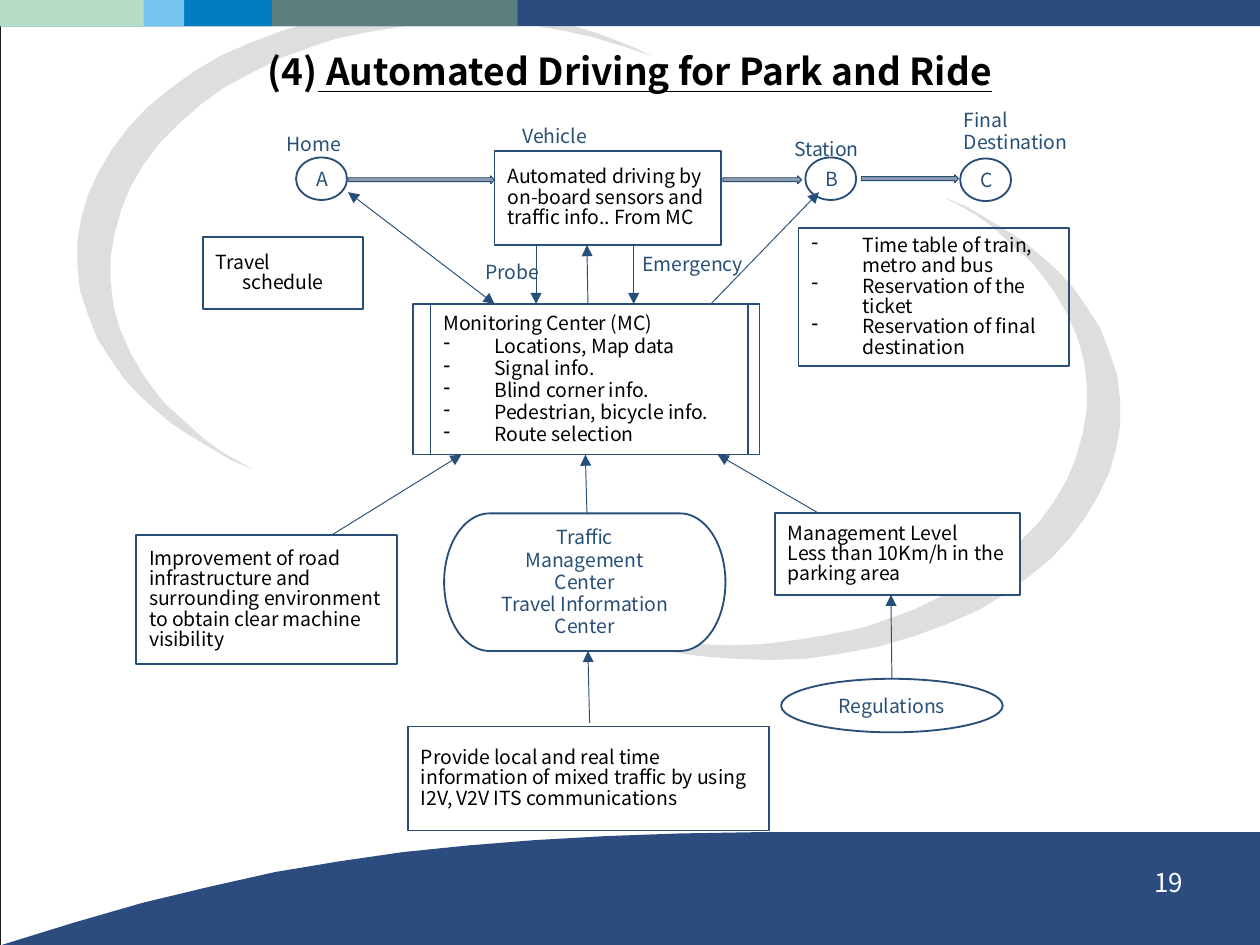
"""Build the Automated Driving for Park and Ride slide."""
import pptx
import pptx.util
from lxml import etree
from pptx.dml.color import RGBColor
from pptx.enum.shapes import MSO_CONNECTOR, MSO_SHAPE
from pptx.enum.text import MSO_ANCHOR, MSO_AUTO_SIZE, PP_ALIGN
from pptx.oxml.ns import qn
from pptx.util import Cm, Pt

COLORS = {
    "ink": "000000", "blue": "274F77", "white": "FFFFFF", "navy": "2C4C80",
    "slate": "5D7E7E", "azure": "007CC3", "sky": "75C5F0", "mint": "B6DDC7",
    "swoosh": "DEDEDD", "frame": "1F1A17", "arrow_top": "9FA9B9", "arrow_end": "7F8CA3",
}
RGB = {name: RGBColor.from_string(value) for name, value in COLORS.items()}
FONT = "Noto Sans CJK JP"


def style(sp, fill=None, line=None, width=1):
    sp.shadow.inherit = False
    if fill:
        sp.fill.solid()
        sp.fill.fore_color.rgb = RGB[fill]
    else:
        sp.fill.background()
    if line:
        sp.line.color.rgb = RGB[line]
        sp.line.width = Pt(width)
    else:
        sp.line.fill.background()


def write(sp, text, color, align=PP_ALIGN.LEFT, spacing=None, size=10.5, hanging=0):
    tf = sp.text_frame
    tf.word_wrap = True
    for i, line in enumerate(text.split("\n")):
        p = tf.paragraphs[0] if i == 0 else tf.add_paragraph()
        bullet = line.startswith("- ")
        indent = 0.97 if bullet else hanging
        if indent:
            pPr = p._p.get_or_add_pPr()
            pPr.set("marL", str(Cm(indent)))
            pPr.set("indent", str(-Cm(indent)))
            if bullet:
                etree.SubElement(pPr, qn("a:buChar")).set("char", "-")
        p.alignment = align
        if spacing:
            p.line_spacing = Pt(spacing)
        r = p.add_run()
        r.text = line.removeprefix("- ")
        for key, value in {"name": FONT, "size": Pt(size)}.items():
            setattr(r.font, key, value)
        r.font.color.rgb = RGB[color]


prs = pptx.Presentation()
prs.slide_width, prs.slide_height = Cm(24), Cm(18)
s = prs.slides.add_slide(prs.slide_layouts[5])
shapes = s.shapes

frame = shapes.add_shape(MSO_SHAPE.RECTANGLE, 0, 0, Cm(24), Cm(18))
style(frame, line="frame", width=0.13)

swoosh = [
    (212, 23), (239, 15), (266, 10), (293, 6), (320, 5), (348, 6), (374, 8), (401, 12),
    (426, 18), (451, 26), (474, 35), (489, 42), (468, 35), (445, 28), (422, 23), (399, 19),
    (374, 17), (350, 16), (326, 17), (301, 20), (277, 24), (252, 29), (237, 34), (212, 43),
    (190, 54), (169, 65), (151, 78), (135, 92), (120, 107), (108, 123), (98, 140), (91, 157),
    (86, 175), (83, 193), (83, 211), (85, 229), (90, 247), (98, 265), (108, 282), (116, 293),
    (124, 303), (134, 312), (144, 321), (154, 330), (165, 338), (177, 345), (190, 352),
    (173, 345), (158, 336), (143, 327), (129, 318), (116, 307), (104, 296), (93, 284),
    (84, 271), (73, 254), (66, 236), (60, 218), (58, 199), (58, 181), (61, 163), (66, 146),
    (74, 129), (84, 112), (96, 96), (110, 81), (127, 67), (145, 54), (165, 42), (188, 32),
]
turned_swoosh = [(898 - x, 500 - y) for x, y in swoosh]
wave = [
    (949, 624), (946, 709), (0, 709), (55, 692), (107, 677), (157, 665), (206, 654),
    (254, 646), (302, 639), (351, 634), (401, 630), (454, 627), (510, 625), (569, 624),
]
for points, fill in [(swoosh, "swoosh"), (turned_swoosh, "swoosh"), (wave, "navy")]:
    builder = shapes.build_freeform(*points[0], scale=Cm(2.54) / 100)
    builder.add_line_segments(points[1:], close=True)
    style(builder.convert_to_shape(), fill)

for width, fill in [(24, "navy"), (9.86, "slate"), (5.18, "azure"), (3.51, "sky"), (2.74, "mint")]:
    style(shapes.add_shape(MSO_SHAPE.RECTANGLE, 0, 0, Cm(width), Cm(0.5)), fill)

title = shapes.title
shapes._spTree.append(title._element)
for key, value in {"left": 1.19, "top": 0.48, "width": 21.62, "height": 1.75}.items():
    setattr(title, key, Cm(value))
tf = title.text_frame
tf.auto_size = MSO_AUTO_SIZE.NONE
tf.vertical_anchor = MSO_ANCHOR.MIDDLE
p = tf.paragraphs[0]
p.alignment = PP_ALIGN.CENTER
for text, underline in [("(4)", False), (" Automated Driving for Park and Ride", True)]:
    r = p.add_run()
    r.text = text
    for key, value in {"name": FONT, "size": Pt(20), "bold": True, "underline": underline}.items():
        setattr(r.font, key, value)
    r.font.color.rgb = RGB["ink"]

monitoring = """Monitoring Center (MC)
- Locations, Map data
- Signal info.
- Blind corner info.
- Pedestrian, bicycle info.
- Route selection"""
reservations = """- Time table of train, metro and bus
- Reservation of the ticket
- Reservation of final destination"""
boxes = [
    (9.42, 2.87, 4.32, 1.8, "Automated driving by on-board sensors and traffic info.. From MC", None, 11, 0),
    (3.86, 4.52, 3.05, 1.37, "Travel schedule", None, 11, 0.51),
    (7.87, 5.79, 6.6, 2.87, "", None, 12, 0),
    (8.2, 5.79, 6.05, 2.87, monitoring, None, 12, 0),
    (15.21, 4.34, 5.16, 2.64, reservations, None, 11, 0),
    (2.59, 10.19, 4.98, 2.46, "Improvement of road infrastructure and surrounding environment "
     "to obtain clear machine visibility", None, 11, 0),
    (14.76, 9.78, 4.67, 1.55, "Management Level\nLess than 10Km/h in the parking area", "white", 11, 0),
    (7.77, 13.84, 6.88, 1.98, "Provide local and real time information of mixed traffic by using "
     "I2V, V2V ITS communications", None, 11, 0),
]
for x, y, w, h, text, fill, spacing, hanging in boxes:
    sp = shapes.add_shape(MSO_SHAPE.RECTANGLE, Cm(x), Cm(y), Cm(w), Cm(h))
    style(sp, fill, "blue")
    if text:
        write(sp, text, "ink", spacing=spacing, hanging=hanging)

nodes = [
    (MSO_SHAPE.OVAL, 5.64, 3, 0.97, 0.81, "A", None),
    (MSO_SHAPE.OVAL, 15.34, 3, 0.97, 0.81, "B", None),
    (MSO_SHAPE.OVAL, 18.29, 3.02, 0.97, 0.81, "C", None),
    (MSO_SHAPE.OVAL, 14.88, 12.93, 4.22, 1.02, "Regulations", None),
    (MSO_SHAPE.FLOWCHART_TERMINATOR, 8.46, 9.78, 5.36, 2.62,
     "Traffic\nManagement\nCenter\nTravel Information Center", 12),
]
for kind, x, y, w, h, text, spacing in nodes:
    sp = shapes.add_shape(kind, Cm(x), Cm(y), Cm(w), Cm(h))
    style(sp, "white", "blue")
    write(sp, text, "blue", PP_ALIGN.CENTER, spacing)

for x, y, w in [(6.63, 3.35, 2.79), (13.77, 3.35, 1.5), (16.41, 3.33, 1.85)]:
    sp = shapes.add_shape(MSO_SHAPE.RIGHT_ARROW, Cm(x), Cm(y), Cm(w), Cm(0.15))
    style(sp, line="blue", width=0.5)
    sp.fill.gradient()
    sp.fill.gradient_angle = 270
    for stop, color in zip(sp.fill.gradient_stops, ["arrow_top", "arrow_end"]):
        stop.color.rgb = RGB[color]

links = [
    (6.63, 3.66, 9.42, 5.79, ["headEnd", "tailEnd"]),
    (13.54, 5.79, 15.6, 3.66, ["tailEnd"]),
    (10.21, 4.67, 10.21, 5.79, ["tailEnd"]),
    (12.07, 4.67, 12.07, 5.79, ["tailEnd"]),
    (11.2, 5.79, 11.18, 4.67, ["tailEnd"]),
    (11.18, 9.78, 11.15, 8.66, ["tailEnd"]),
    (15.6, 9.78, 13.67, 8.66, ["tailEnd"]),
    (16.99, 12.93, 16.97, 11.33, ["tailEnd"]),
    (11.23, 13.77, 11.2, 12.4, ["tailEnd"]),
    (6.32, 10.19, 8.79, 8.66, ["tailEnd"]),
]
for x1, y1, x2, y2, ends in links:
    link = shapes.add_connector(MSO_CONNECTOR.STRAIGHT, Cm(x1), Cm(y1), Cm(x2), Cm(y2))
    link.line.color.rgb = RGB["blue"]
    link.line.width = Pt(0.5)
    for end in ends:
        etree.SubElement(link.line._get_or_add_ln(), qn(f"a:{end}")).set("type", "triangle")
    etree.SubElement(link._element.spPr, qn("a:effectLst"))

labels = [
    (5.21, 2.41, 3.28, 1.09, "Home", 12),
    (9.7, 2.24, 2.06, 0.76, "Vehicle", None),
    (11.99, 4.67, 2.62, 0.76, "Emergency", None),
    (8.99, 4.83, 2.08, 0.76, "Probe", None),
    (14.88, 2.51, 3.28, 1.09, "Station", 12),
    (18.11, 1.96, 3.28, 1.09, "Final\nDestination", 12),
]
for x, y, w, h, text, spacing in labels:
    write(shapes.add_textbox(Cm(x), Cm(y), Cm(w), Cm(h)), text, "blue", spacing=spacing)

page_number = shapes.add_textbox(Cm(17.2), Cm(16.38), Cm(5.59), Cm(1.24))
write(page_number, "19", "white", PP_ALIGN.RIGHT, size=14)

prs.save("out.pptx")
